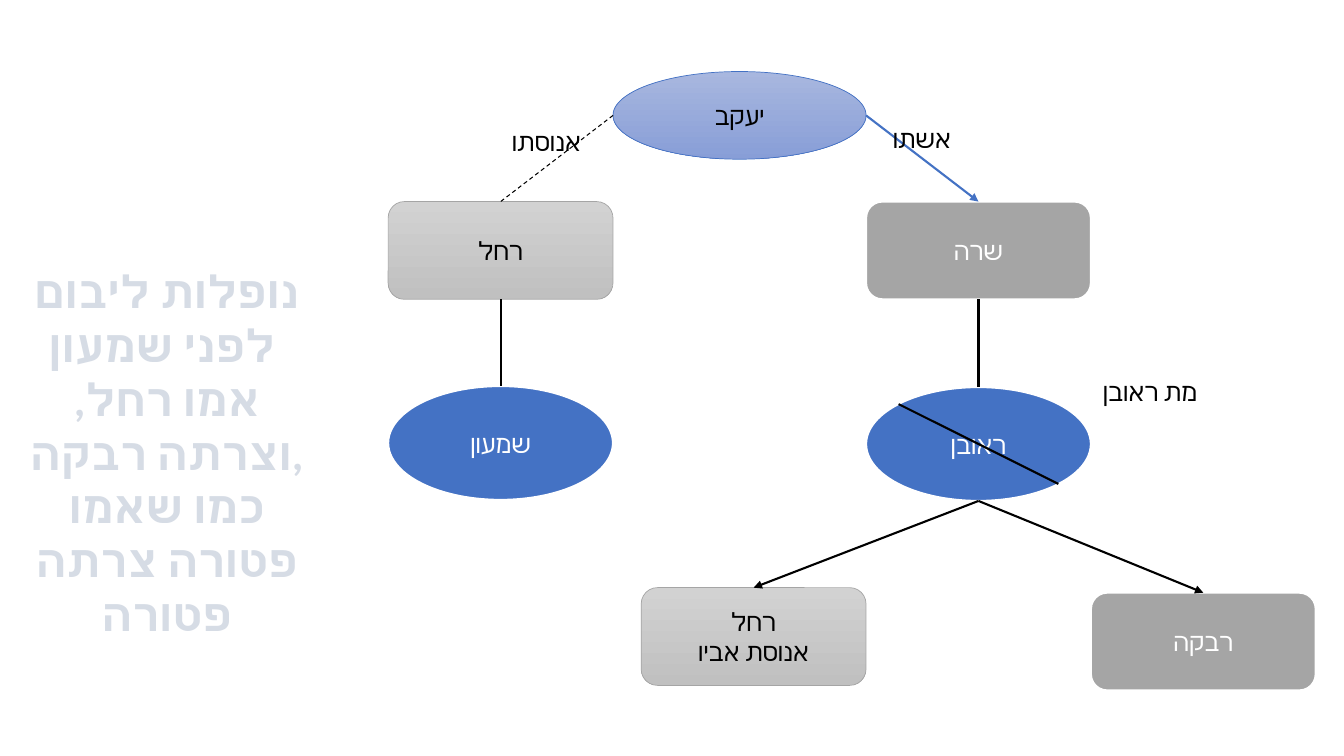
from lxml import etree
from pptx import Presentation
from pptx.dml.color import RGBColor
from pptx.enum.dml import MSO_LINE as Dash
from pptx.enum.shapes import MSO_CONNECTOR as Conn, MSO_SHAPE as Shape
from pptx.enum.text import MSO_ANCHOR as Anchor, PP_ALIGN as Align
from pptx.oxml.ns import qn
from pptx.util import Inches, Pt

FONT = "Calibri"
BLACK, WHITE, BLUE, GRAY = "000000", "FFFFFF", "4472C4", "A5A5A5"

# Looks of the nodes: shape, fill colours from top to bottom, line, width, text
FATHER = (Shape.OVAL, ("A8B7DF", "889ED7"), BLUE, 0.5, BLACK)
SON = (Shape.OVAL, (BLUE,), WHITE, 1.5, WHITE)
WIFE = (Shape.ROUNDED_RECTANGLE, (GRAY,), WHITE, 1.5, WHITE)
FORCED = (Shape.ROUNDED_RECTANGLE, ("D2D2D2", "C0C0C0"), GRAY, 0.5, BLACK)


def color(code):
    return RGBColor.from_string(code)


def write(frame, lines, size=18, ink=BLACK, bold=False):
    """Fill a text frame with centred paragraphs."""
    frame.word_wrap = True
    for i, line in enumerate(lines):
        para = frame.paragraphs[0] if i == 0 else frame.add_paragraph()
        para.alignment = Align.CENTER
        run = para.add_run()
        run.text = line
        font = run.font
        font.name, font.size, font.bold = FONT, Pt(size), bold
        font.color.rgb = color(ink)
        # Hebrew letters take the complex-script font
        etree.SubElement(font._element, qn("a:cs"), typeface=FONT)


def node(slide, box, look, *lines):
    """Draw one person and return the box."""
    kind, fills, edge, width, ink = look
    shape = slide.shapes.add_shape(kind, *map(Inches, box))
    shape.shadow.inherit = False
    if len(fills) == 1:
        shape.fill.solid()
        shape.fill.fore_color.rgb = color(fills[0])
    else:
        shape.fill.gradient()
        shape.fill.gradient_angle = 270
        for stop, code in zip(shape.fill.gradient_stops, fills):
            stop.color.rgb = color(code)
    shape.line.color.rgb = color(edge)
    shape.line.width = Pt(width)
    shape.text_frame.vertical_anchor = Anchor.MIDDLE
    write(shape.text_frame, lines, ink=ink)
    return box


def spot(box, x, y):
    """Point at a fraction of a box's width and height."""
    return box[0] + x * box[2], box[1] + y * box[3]


def top(box):
    return spot(box, 0.5, 0)


def base(box):
    return spot(box, 0.5, 1)


def link(slide, start, end, ink=BLACK, width=1.5, dash=None, arrow=False):
    line = slide.shapes.add_connector(
        Conn.STRAIGHT, *map(Inches, (*start, *end)))
    line.line.color.rgb = color(ink)
    line.line.width = Pt(width)
    if dash:
        line.line.dash_style = dash
    if arrow:
        etree.SubElement(line.line._get_or_add_ln(), qn("a:tailEnd"),
                         type="triangle")
    etree.SubElement(line._element.spPr, qn("a:effectLst"))


def label(slide, box, *lines, **style):
    text = slide.shapes.add_textbox(*map(Inches, box))
    write(text.text_frame, lines, **style)


def tree(slide, left, y):
    """Draw the family tree with its top left corner at the given point."""
    wide, card, oval = 2.23, 0.97, 1.13
    right = left + 4.74
    mid = right - wide

    # People
    jacob = node(slide, (left + wide, y, 2.51, 0.87), FATHER, "יעקב")
    sarah = node(slide, (right, y + 1.29, wide, card), WIFE, "שרה")
    rachel = node(slide, (left, y + 1.29, wide, card), FORCED, "רחל")
    reuben = node(slide, (right, y + 3.13, wide, oval), SON, "ראובן")
    simeon = node(slide, (left, y + 3.12, wide, oval), SON, "שמעון")
    second = node(slide, (mid, y + 5.12, wide, card), FORCED,
                  "רחל", "אנוסת אביו")
    rebecca = node(slide, (right + wide, y + 5.17, wide, card), WIFE, "רבקה")

    # Bonds and descent
    link(slide, spot(jacob, 1, 0.5), top(sarah), ink=BLUE, arrow=True)
    link(slide, spot(jacob, 0, 0.5), top(rachel), width=0.75, dash=Dash.DASH)
    for parent, child in ((sarah, reuben), (rachel, simeon)):
        link(slide, base(parent), top(child))
    for wife in (second, rebecca):
        link(slide, base(reuben), top(wife), arrow=True)

    # Strike through the dead brother
    link(slide, spot(reuben, 0.145, 0.15), spot(reuben, 0.855, 0.85))

    # Labels
    label(slide, (left + 4.66, y + 0.46, 1.27, 0.4), "אשתו")
    label(slide, (left + 0.99, y + 0.49, 1.16, 0.4), "אנוסתו")
    label(slide, (left + 6.81, y + 2.97, 1.49, 0.4), "מת ראובן")


def ruling(slide, box):
    """Write the ruling beside the tree."""
    label(slide, box, "נופלות ליבום לפני שמעון ", "אמו רחל, וצרתה רבקה,",
          "כמו שאמו פטורה צרתה פטורה", size=32, ink="D6DCE5", bold=True)


def main():
    deck = Presentation()
    deck.slide_width, deck.slide_height = Inches(13.33), Inches(7.5)
    slide = deck.slides.add_slide(deck.slide_layouts[6])
    tree(slide, 3.85, 0.71)
    ruling(slide, (0.04, 2.57, 3.23, 3.33))
    deck.save("out.pptx")


if __name__ == "__main__":
    main()
